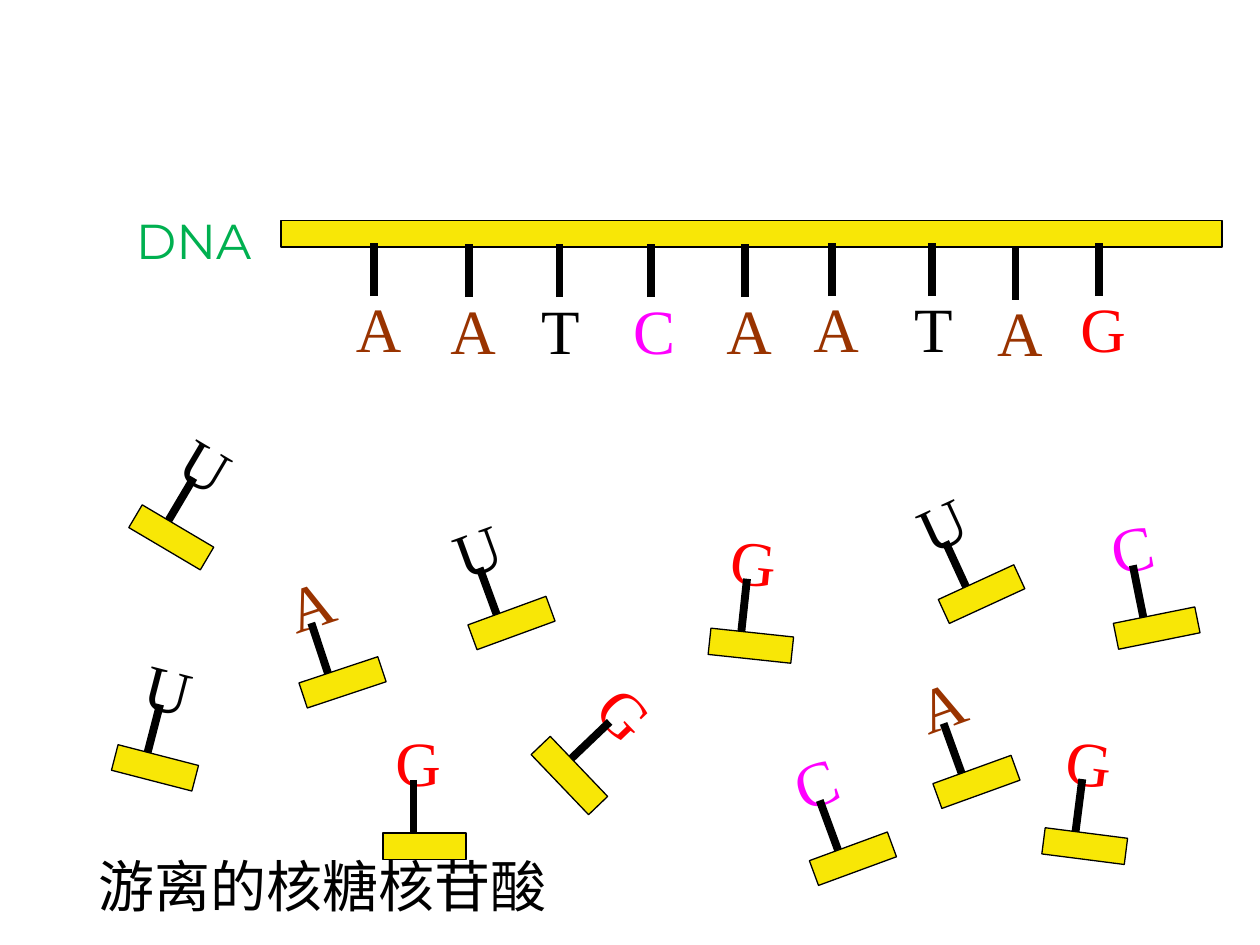
from dataclasses import dataclass, field
from math import cos, radians, sin

from lxml import etree
from pptx import Presentation
from pptx import util as u
from pptx.dml.color import RGBColor
from pptx.enum import shapes, text
from pptx.oxml.ns import qn


@dataclass(frozen=True)
class Theme:
    black: str = "000000"
    label_green: str = "00B050"
    backbone: str = "F8E706"
    letter_colors: dict = field(default_factory=lambda: {
        "A": "993300", "C": "FF00FF", "G": "FF0000", "T": "000000", "U": "000000"})
    letter_font: str = "Times New Roman"
    label_font: str = "Montserrat"
    caption_font: str = "Noto Sans CJK SC"
    letter_size: float = 36
    label_size: float = 28
    caption_size: float = 32
    outline: float = 0.75
    stem: float = 4.5


@dataclass(frozen=True)
class StrandBase:
    letter: str
    stem_x: float
    letter_top: float


@dataclass(frozen=True)
class Nucleotide:
    letter: str
    center_x: float
    center_y: float
    angle: float = 0


@dataclass(frozen=True)
class Label:
    words: str
    left: float
    top: float
    width: float
    height: float
    font: str
    size: float
    color: str
    top_inset: float


THEME = Theme()
UNIT_WIDTH, BAR_HEIGHT, LETTER_HEIGHT = 47.5, 15.1, 49.7
STEM_LENGTH, STEM_OFFSET = 30.2, 6.3
LETTER_INSET = 7.3
STEM_TO_LETTER_LEFT = 17.5
STEM_OVERLAP = 10.8

LABELS = [
    Label("DNA", 70.6, 116.6, 83.5, 41, THEME.label_font, THEME.label_size,
          THEME.label_green, 4),
    Label("游离的核糖核苷酸", 49, 486.7, 311.8, 45.4, THEME.caption_font,
          THEME.caption_size, THEME.black, 0),
]

STRAND = [
    StrandBase("A", 213.8, 158.4),
    StrandBase("A", 267.8, 159),
    StrandBase("T", 319.7, 159),
    StrandBase("C", 372.2, 159),
    StrandBase("A", 425.5, 159),
    StrandBase("A", 475.2, 158.4),
    StrandBase("T", 532.8, 158.4),
    StrandBase("A", 580.3, 160.6),
    StrandBase("G", 627.8, 158.4),
]

NUCLEOTIDES = [
    Nucleotide("U", 97.9, 307.1, 30.6),
    Nucleotide("U", 292.3, 356, 339.9),
    Nucleotide("G", 242.6, 483.5),
    Nucleotide("G", 429.1, 369, 6.1),
    Nucleotide("A", 558, 446.8, 340.1),
    Nucleotide("C", 487.4, 490.7, 339.8),
    Nucleotide("U", 88.6, 438.8, 14.5),
    Nucleotide("G", 619.9, 483.5, 7.3),
    Nucleotide("C", 661, 358.9, 348.6),
    Nucleotide("U", 560.9, 339.5, 335.3),
    Nucleotide("G", 325.4, 443.2, 46.3),
    Nucleotide("A", 195.8, 389.9, 341.6),
]


def apply_format(target, values: dict) -> None:
    for name, value in values.items():
        setattr(target, name, value)


def draw_label(container, label: Label, angle: float = 0) -> None:
    box = container.shapes.add_textbox(
        u.Pt(label.left), u.Pt(label.top), u.Pt(label.width), u.Pt(label.height))
    box.rotation = angle
    apply_format(box.text_frame, {
        "word_wrap": True,
        "auto_size": text.MSO_AUTO_SIZE.NONE,
        "vertical_anchor": text.MSO_ANCHOR.TOP,
        "margin_top": u.Pt(label.top_inset),
        "margin_bottom": 0,
    })
    run = box.text_frame.paragraphs[0].add_run()
    run.text = label.words
    apply_format(run.font, {"name": label.font, "size": u.Pt(label.size)})
    run.font.color.rgb = RGBColor.from_string(label.color)
    east_asian = etree.SubElement(run.font._element, qn("a:ea"))
    east_asian.set("typeface", label.font)


def draw_letter(container, letter: str, left: float, top: float, angle: float = 0) -> None:
    draw_label(container, Label(
        letter, left, top, UNIT_WIDTH, LETTER_HEIGHT, THEME.letter_font,
        THEME.letter_size, THEME.letter_colors[letter], LETTER_INSET), angle)


def draw_stem(container, start: tuple[float, float], end: tuple[float, float]) -> None:
    stem = container.shapes.add_connector(
        shapes.MSO_CONNECTOR.STRAIGHT, *(u.Pt(value) for value in (*start, *end)))
    stem.line.width = u.Pt(THEME.stem)
    stem.line.color.rgb = RGBColor.from_string(THEME.black)
    etree.SubElement(stem._element.spPr, qn("a:effectLst"))


def draw_bar(container, left: float, top: float, width: float, angle: float = 0) -> None:
    bar = container.shapes.add_shape(
        shapes.MSO_SHAPE.RECTANGLE, u.Pt(left), u.Pt(top), u.Pt(width), u.Pt(BAR_HEIGHT))
    bar.rotation = angle
    bar.shadow.inherit = False
    bar.fill.solid()
    bar.fill.fore_color.rgb = RGBColor.from_string(THEME.backbone)
    bar.line.width = u.Pt(THEME.outline)
    bar.line.color.rgb = RGBColor.from_string(THEME.black)


def draw_strand(slide) -> None:
    group = slide.shapes.add_group_shape()
    draw_bar(group, 160.6, 126, 537.8)
    for base in STRAND:
        draw_letter(group, base.letter, base.stem_x - STEM_TO_LETTER_LEFT, base.letter_top)
        stem_bottom = base.letter_top + STEM_OVERLAP
        draw_stem(group, (base.stem_x, stem_bottom), (base.stem_x, stem_bottom - STEM_LENGTH))


def draw_nucleotide(slide, nucleotide: Nucleotide) -> None:
    group = slide.shapes.add_group_shape()
    turn = radians(nucleotide.angle)
    reach = 50.6 if nucleotide.letter == "U" else 52.6

    def place(across: float, up: float) -> tuple[float, float]:
        return (nucleotide.center_x + across * cos(turn) + up * sin(turn),
                nucleotide.center_y + across * sin(turn) - up * cos(turn))

    letter_x, letter_y = place(0, reach)
    draw_letter(group, nucleotide.letter, letter_x - UNIT_WIDTH / 2,
                letter_y - LETTER_HEIGHT / 2, nucleotide.angle)
    stem_top = reach - 14.8
    draw_stem(group, place(-STEM_OFFSET, stem_top),
              place(-STEM_OFFSET, stem_top - STEM_LENGTH))
    draw_bar(group, nucleotide.center_x - UNIT_WIDTH / 2,
             nucleotide.center_y - BAR_HEIGHT / 2, UNIT_WIDTH, nucleotide.angle)


def main() -> None:
    presentation = Presentation()
    apply_format(presentation, {"slide_width": u.Pt(720), "slide_height": u.Pt(540)})
    slide = presentation.slides.add_slide(presentation.slide_layouts[6])
    for label in LABELS:
        draw_label(slide, label)
    draw_strand(slide)
    for nucleotide in NUCLEOTIDES:
        draw_nucleotide(slide, nucleotide)
    presentation.save("out.pptx")


if __name__ == "__main__":
    main()
